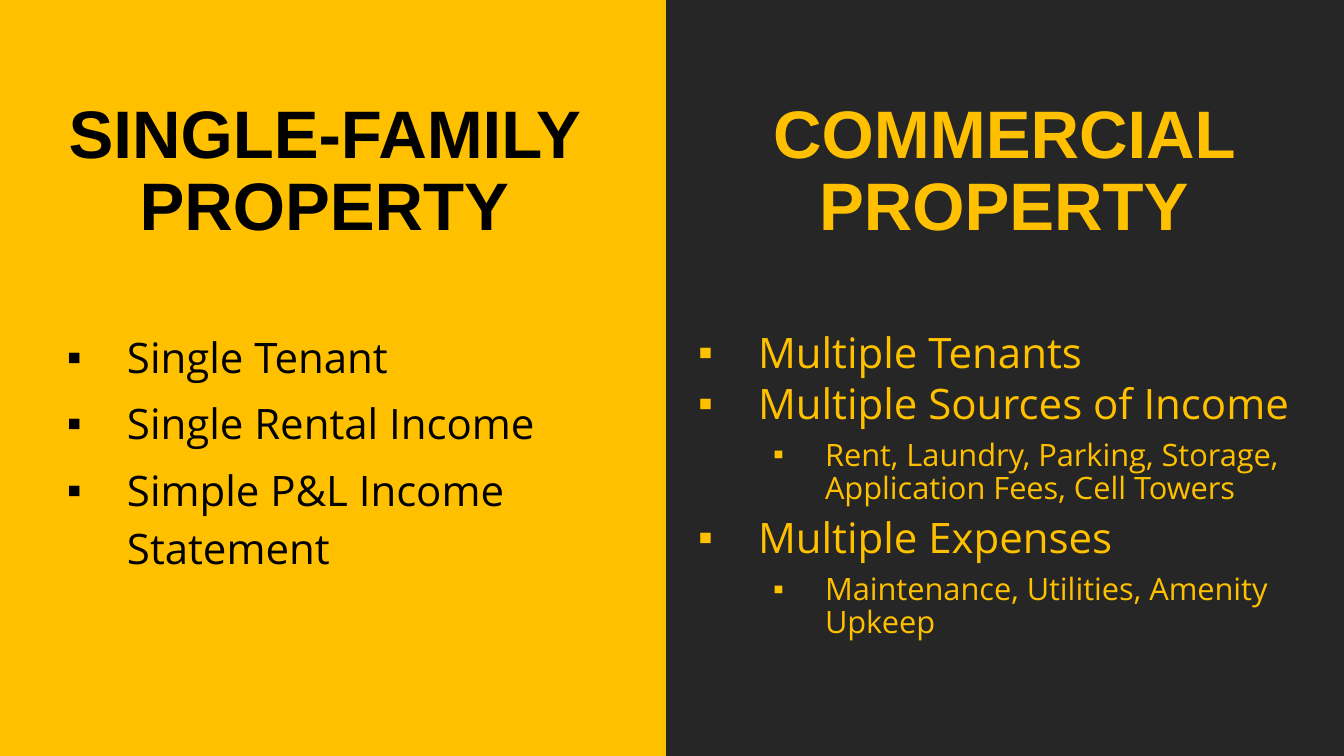
from lxml import etree
from pptx import Presentation
from pptx import util as u
from pptx.dml.color import RGBColor
from pptx.enum import shapes, text
from pptx.oxml.ns import qn

AMBER = RGBColor(0xFF, 0xC0, 0x00)
CHARCOAL = RGBColor(0x26, 0x26, 0x26)
BLACK = RGBColor(0, 0, 0)

SLIDE_SIZE = (1344, 756)
EMU_PER_PX = 914400 / 100.8
INSET = 13

# Boxes are left, top, width, height in px.
# Points are level, wording, line spacing, space before in pt.
SIDES = [
    {
        "panel": (0, 0, 666, 756), "fill": AMBER, "ink": BLACK,
        "heading": "SINGLE-FAMILY PROPERTY",
        "heading_slot": 0, "heading_box": (38, 87, 573, 84),
        "list_slot": 2, "list_box": (47, 311, 555, 569),
        "points": [
            (0, "Single Tenant", 1.15, 6),
            (0, "Single Rental Income", 1.15, 6),
            (0, "Simple P&L Income Statement", 1.15, 6),
        ],
    },
    {
        "panel": (666, 0, 678, 756), "fill": CHARCOAL, "ink": AMBER,
        "heading": "COMMERCIAL PROPERTY",
        "heading_slot": 3, "heading_box": (701, 87, 606, 180),
        "list_slot": 4, "list_box": (678, 319, 666, 562),
        "points": [
            (0, "Multiple Tenants", 0.9, 0),
            (0, "Multiple Sources of Income", 0.9, 4),
            (1, "Rent, Laundry, Parking, Storage, Application Fees, Cell Towers", 0.9, 8),
            (0, "Multiple Expenses", 0.9, 8),
            (1, "Maintenance, Utilities, Amenity Upkeep", 0.9, 8),
        ],
    },
]
HEADING_FONT = {"name": "Arial", "size": u.Pt(48), "bold": True}
# Per level: font, left margin px, hanging indent px
LEVELS = [
    ({"name": "Open Sans", "size": u.Pt(30), "bold": False}, 67, -60),
    ({"name": "Open Sans", "size": u.Pt(22), "bold": False}, 134, -52),
]


def px(length):
    return u.Emu(round(length * EMU_PER_PX))


def apply(target, values):
    for name, value in values.items():
        setattr(target, name, value)


def place(shape, box):
    apply(shape, dict(zip(("left", "top", "width", "height"), map(px, box))))


def prepare_frame(placeholder, box):
    place(placeholder, box)
    frame = placeholder.text_frame
    apply(frame, {
        "word_wrap": True,
        "auto_size": text.MSO_AUTO_SIZE.NONE,
        "vertical_anchor": text.MSO_ANCHOR.TOP,
    })
    apply(frame, {f"margin_{edge}": px(INSET) for edge in ("left", "top", "right", "bottom")})
    return frame


def write(paragraph, wording, font, ink, spacing):
    run = paragraph.add_run()
    run.text = wording
    apply(run.font, font)
    run.font.color.rgb = ink
    apply(paragraph, spacing)


def add_square_bullet(paragraph, ink, margin, indent):
    properties = paragraph._p.get_or_add_pPr()
    properties.set("marL", str(px(margin)))
    properties.set("indent", str(px(indent)))
    colour = etree.SubElement(properties, qn("a:buClr"))
    etree.SubElement(colour, qn("a:srgbClr"), val=str(ink))
    etree.SubElement(properties, qn("a:buFont"), typeface="Arial")
    etree.SubElement(properties, qn("a:buChar"), char="▪")


def add_panel(slide, box, fill):
    """Add a plain rectangle behind everything else."""
    panel = slide.shapes.add_shape(shapes.MSO_SHAPE.RECTANGLE, *map(px, box))
    panel.shadow.inherit = False
    panel.fill.solid()
    panel.fill.fore_color.rgb = fill
    panel.line.fill.background()
    panel._element.getparent().insert(2, panel._element)


def add_side(slide, side):
    slots = {p.placeholder_format.idx: p for p in slide.placeholders}
    ink = side["ink"]
    add_panel(slide, side["panel"], side["fill"])

    heading = prepare_frame(slots[side["heading_slot"]], side["heading_box"])
    write(heading.paragraphs[0], side["heading"], HEADING_FONT, ink, {
        "alignment": text.PP_ALIGN.CENTER, "line_spacing": 0.9, "space_before": u.Pt(0),
    })

    points = prepare_frame(slots[side["list_slot"]], side["list_box"])
    for number, (level, wording, line_spacing, before) in enumerate(side["points"]):
        paragraph = points.add_paragraph() if number else points.paragraphs[0]
        font, margin, indent = LEVELS[level]
        write(paragraph, wording, font, ink, {
            "level": level, "line_spacing": line_spacing,
            "space_before": u.Pt(before), "space_after": u.Pt(0),
        })
        add_square_bullet(paragraph, ink, margin, indent)


def main():
    deck = Presentation()
    deck.slide_width, deck.slide_height = map(px, SLIDE_SIZE)
    comparison = deck.slide_layouts.get_by_name("Comparison")
    slide = deck.slides.add_slide(comparison)
    for side in SIDES:
        add_side(slide, side)
    for placeholder in list(slide.placeholders):
        if not placeholder.text_frame.text:
            placeholder._element.getparent().remove(placeholder._element)
    deck.save("out.pptx")


if __name__ == "__main__":
    main()
